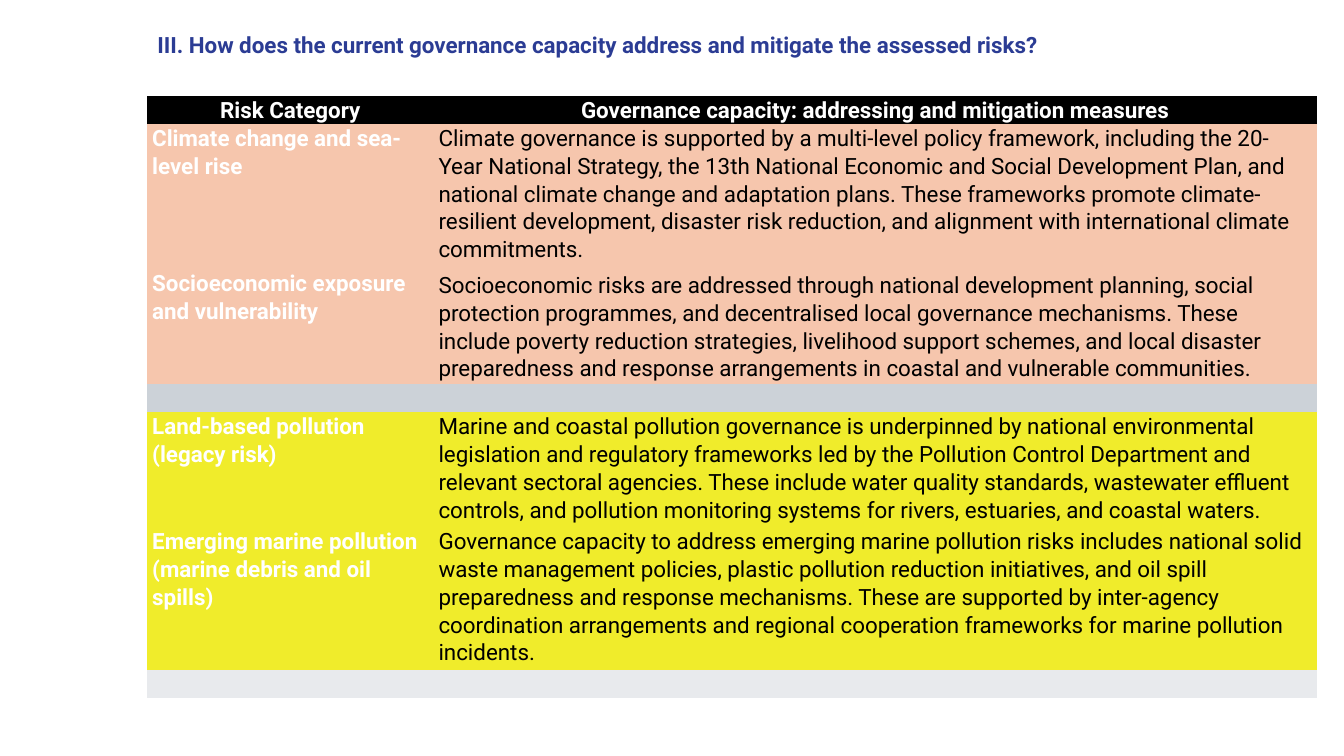
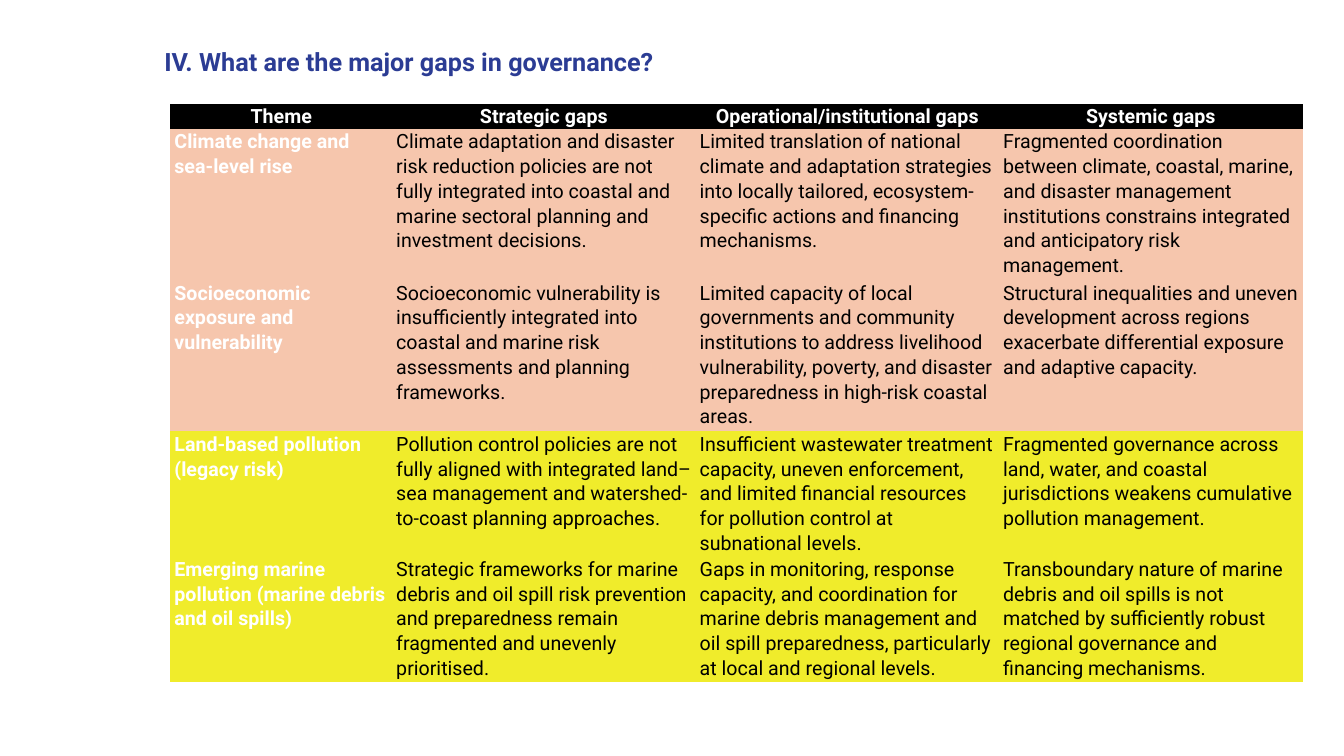
from dataclasses import dataclass

from pptx import Presentation
from pptx.dml.color import RGBColor
from pptx.enum.text import MSO_ANCHOR, MSO_AUTO_SIZE, PP_ALIGN
from pptx.util import Inches, Pt


@dataclass(frozen=True)
class Theme:
    font: str = "Roboto"
    title: str = "2B3C94"
    header: str = "000000"
    label: str = "FFFFFF"
    body: str = "000000"
    climate: str = "F6C6AD"
    pollution: str = "F0EC2B"
    spacer_dark: str = "CCD2D8"
    spacer_light: str = "E8EAED"
    capacity_title_size: int = 16
    gaps_title_size: int = 18
    capacity_size: int = 16
    gaps_size: int = 14
    line_spacing: float = 1.07
    space_after: int = 8
    plain_table_style: str = "{2D5ABB26-0587-4C30-8999-92F81FD0307C}"


T = Theme()

CLIMATE = "Climate change and sea-level rise"
SOCIAL = "Socioeconomic exposure and vulnerability"
LAND = "Land-based pollution (legacy risk)"
MARINE = "Emerging marine pollution (marine debris and oil spills)"

# Each row: height, fill, cell texts; a row without texts is a spacer.
CAPACITY_ROWS = [
    (0.28, T.header, ["Risk Category", "Governance capacity: addressing and mitigation measures"]),
    (1.44, T.climate, [
        CLIMATE,
        "Climate governance is supported by a multi-level policy framework, including the "
        "20-Year National Strategy, the 13th National Economic and Social Development Plan, "
        "and national climate change and adaptation plans. These frameworks promote "
        "climate-resilient development, disaster risk reduction, and alignment with "
        "international climate commitments.",
    ]),
    (1.14, T.climate, [
        SOCIAL,
        "Socioeconomic risks are addressed through national development planning, social "
        "protection programmes, and decentralised local governance mechanisms. These include "
        "poverty reduction strategies, livelihood support schemes, and local disaster "
        "preparedness and response arrangements in coastal and vulnerable communities.",
    ]),
    (0.28, T.spacer_dark, []),
    (1.14, T.pollution, [
        LAND,
        "Marine and coastal pollution governance is underpinned by national environmental "
        "legislation and regulatory frameworks led by the Pollution Control Department and "
        "relevant sectoral agencies. These include water quality standards, wastewater "
        "effluent controls, and pollution monitoring systems for rivers, estuaries, and "
        "coastal waters.",
    ]),
    (1.42, T.pollution, [
        MARINE,
        "Governance capacity to address emerging marine pollution risks includes national "
        "solid waste management policies, plastic pollution reduction initiatives, and oil "
        "spill preparedness and response mechanisms. These are supported by inter-agency "
        "coordination arrangements and regional cooperation frameworks for marine pollution "
        "incidents.",
    ]),
    (0.28, T.spacer_light, []),
]

GAPS_ROWS = [
    (0.25, T.header, ["Theme", "Strategic gaps", "Operational/institutional gaps", "Systemic gaps"]),
    (1.5, T.climate, [
        CLIMATE,
        "Climate adaptation and disaster risk reduction policies are not fully integrated "
        "into coastal and marine sectoral planning and investment decisions.",
        "Limited translation of national climate and adaptation strategies into locally "
        "tailored, ecosystem-specific actions and financing mechanisms.",
        "Fragmented coordination between climate, coastal, marine, and disaster management "
        "institutions constrains integrated and anticipatory risk management.",
    ]),
    (1.5, T.climate, [
        SOCIAL,
        "Socioeconomic vulnerability is insufficiently integrated into coastal and marine "
        "risk assessments and planning frameworks.",
        "Limited capacity of local governments and community institutions to address "
        "livelihood vulnerability, poverty, and disaster preparedness in high-risk coastal "
        "areas.",
        "Structural inequalities and uneven development across regions exacerbate "
        "differential exposure and adaptive capacity.",
    ]),
    (1.24, T.pollution, [
        LAND,
        "Pollution control policies are not fully aligned with integrated land–sea "
        "management and watershed-to-coast planning approaches.",
        "Insufficient wastewater treatment capacity, uneven enforcement, and limited "
        "financial resources for pollution control at subnational levels.",
        "Fragmented governance across land, water, and coastal jurisdictions weakens "
        "cumulative pollution management.",
    ]),
    (1.25, T.pollution, [
        MARINE,
        "Strategic frameworks for marine debris and oil spill risk prevention and "
        "preparedness remain fragmented and unevenly prioritised.",
        "Gaps in monitoring, response capacity, and coordination for marine debris "
        "management and oil spill preparedness, particularly at local and regional levels.",
        "Transboundary nature of marine debris and oil spills is not matched by sufficiently "
        "robust regional governance and financing mechanisms.",
    ]),
]


def add_titled_slide(prs, text, size, left, top, width, height):
    slide = prs.slides.add_slide(prs.slide_layouts[5])
    sp = slide.shapes.title
    sp.left, sp.top, sp.width, sp.height = map(Inches, (left, top, width, height))
    tf = sp.text_frame
    tf.text = text
    tf.word_wrap = True
    tf.auto_size = MSO_AUTO_SIZE.NONE
    tf.vertical_anchor = MSO_ANCHOR.TOP
    p = tf.paragraphs[0]
    p.alignment = PP_ALIGN.LEFT
    font = p.runs[0].font
    font.name, font.size, font.bold = T.font, Pt(size), True
    font.color.rgb = RGBColor.from_string(T.title)
    return slide


def add_risk_table(slide, rows, widths, left, top, size, inset):
    """Add a table with a centred header row and bold labels in its first column."""
    height = sum(row[0] for row in rows)
    table = slide.shapes.add_table(
        len(rows), len(widths), Inches(left), Inches(top), Inches(sum(widths)), Inches(height)
    ).table
    table._tbl.tblPr[0].text = T.plain_table_style
    table.horz_banding = False
    for column, width in zip(table.columns, widths):
        column.width = Inches(width)

    for i, (row_height, fill, texts) in enumerate(rows):
        table.rows[i].height = Inches(row_height)
        for j in range(len(widths)):
            cell = table.cell(i, j)
            cell.fill.solid()
            cell.fill.fore_color.rgb = RGBColor.from_string(fill)
            cell.margin_left = cell.margin_right = Inches(inset)
            cell.margin_top = cell.margin_bottom = 0
            p = cell.text_frame.paragraphs[0]
            if not texts:
                p._p.get_or_add_endParaRPr().set("sz", str(size * 100))
                continue
            p.text = texts[j]
            p.alignment = PP_ALIGN.CENTER if i == 0 else PP_ALIGN.LEFT
            p.line_spacing = T.line_spacing
            p.space_after = Pt(T.space_after)
            is_label = i == 0 or j == 0
            font = p.runs[0].font
            font.name, font.size, font.bold = T.font, Pt(size), is_label
            font.color.rgb = RGBColor.from_string(T.label if is_label else T.body)
    return table


prs = Presentation()
prs.slide_width, prs.slide_height = Inches(13.33), Inches(7.5)

slide = add_titled_slide(
    prs,
    "III. How does the current governance capacity address and mitigate the assessed risks?",
    T.capacity_title_size, 1.46, 0.26, 10.78, 0.37,
)
table = add_risk_table(slide, CAPACITY_ROWS, [2.84, 8.76], 1.46, 0.95, T.capacity_size, 0.05)
table.cell(2, 1).vertical_anchor = MSO_ANCHOR.MIDDLE

slide = add_titled_slide(
    prs, "IV. What are the major gaps in governance?",
    T.gaps_title_size, 1.53, 0.41, 6.67, 0.4,
)
add_risk_table(slide, GAPS_ROWS, [2.2] + [3.01] * 3, 1.69, 1.03, T.gaps_size, 0.04)

prs.save("out.pptx")
